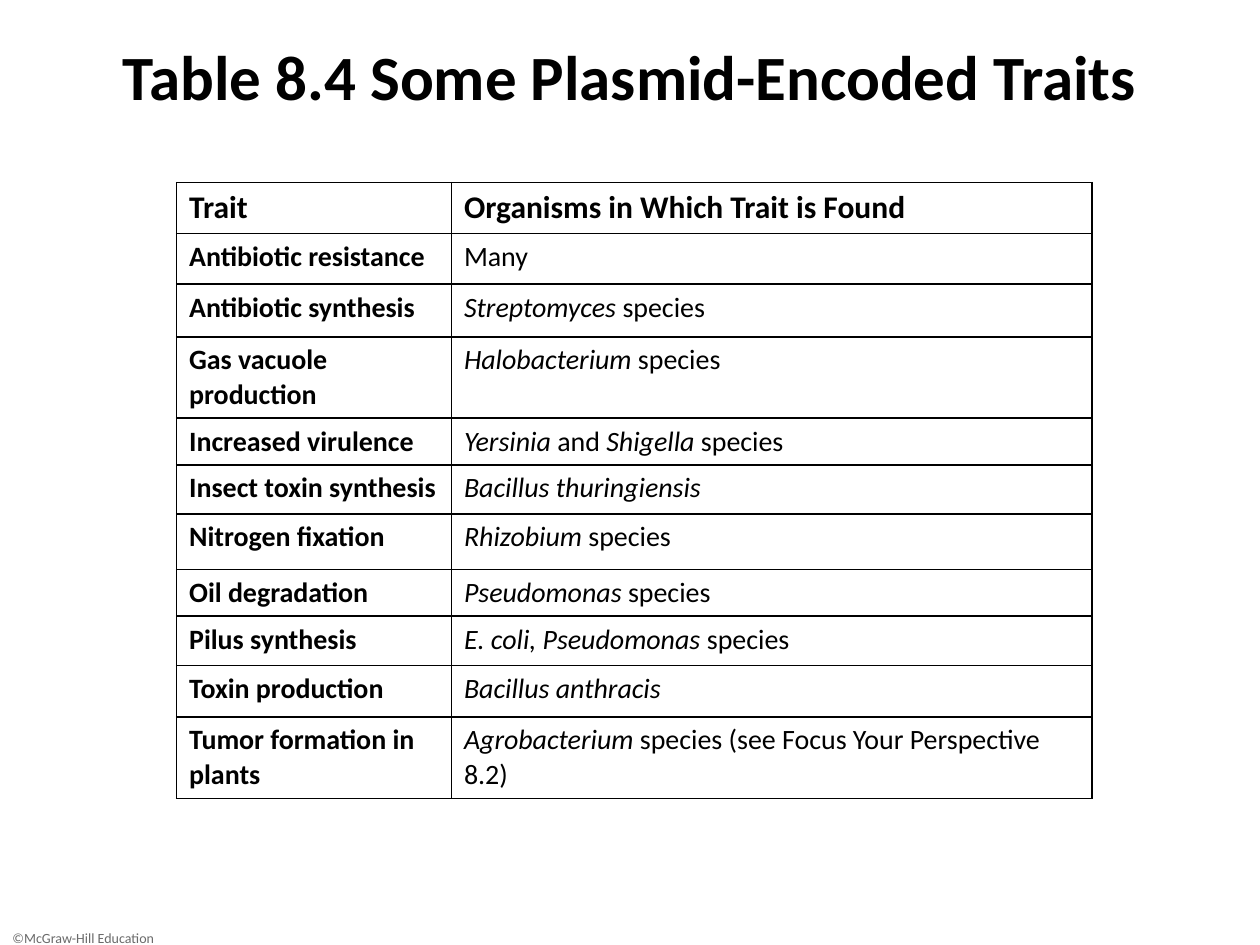
from lxml.etree import SubElement
from pptx import Presentation
from pptx.dml.color import RGBColor
from pptx.enum.text import MSO_ANCHOR, PP_ALIGN
from pptx.oxml import parse_xml
from pptx.oxml.ns import nsdecls, qn
from pptx.util import Cm, Pt


def set_font(font, size, color="000000", bold=False):
    font.name = "Calibri"
    font.size = Pt(size)
    font.bold = bold
    font.color.rgb = RGBColor.from_string(color)


def add_text(page, text, left, top, width, height):
    box = page.shapes.add_textbox(Cm(left), Cm(top), Cm(width), Cm(height))
    box.text_frame.word_wrap = True
    box.text_frame.vertical_anchor = MSO_ANCHOR.TOP
    para = box.text_frame.paragraphs[0]
    para.text = text
    return para


deck = Presentation()
deck.slide_width, deck.slide_height = Cm(25.4), Cm(19.05)
page = deck.slides.add_slide(deck.slide_layouts[6])

copyright_line = add_text(page, "©McGraw-Hill Education", 0, 18.62, 3.81, 0.43)
set_font(copyright_line.font, 8, "6A6A6A")

title = add_text(page, "Table 8.4 Some Plasmid-Encoded Traits", 0, 0.64, 25.4, 1.7)
title.alignment = PP_ALIGN.CENTER
set_font(title.font, 36, bold=True)

# Asterisks enclose species names set in italics; each row ends with its height.
rows = [
    ("Trait", "Organisms in Which Trait is Found", 1.03),
    ("Antibiotic resistance", "Many", 1.02),
    ("Antibiotic synthesis", "*Streptomyces* species", 1.06),
    ("Gas vacuole production", "*Halobacterium* species", 1.64),
    ("Increased virulence", "*Yersinia* and *Shigella* species", 0.94),
    ("Insect toxin synthesis", "*Bacillus thuringiensis*", 0.99),
    ("Nitrogen fixation", "*Rhizobium* species", 1.12),
    ("Oil degradation", "*Pseudomonas* species", 0.94),
    ("Pilus synthesis", "*E. coli, Pseudomonas *species", 1),
    ("Toxin production", "*Bacillus anthracis*", 1.03),
    ("Tumor formation in plants", "*Agrobacterium* species (see Focus Your Perspective 8.2)", 1.65),
]
total_height = sum(height for *_, height in rows)
table = page.shapes.add_table(
    len(rows), 2, Cm(3.56), Cm(3.68), Cm(18.45), Cm(total_height)
).table
table.columns[0].width = Cm(5.54)
table.columns[1].width = Cm(12.91)

for row_index, (trait, organisms, height) in enumerate(rows):
    table.rows[row_index].height = Cm(height)
    is_header = row_index == 0
    for column_index, text in enumerate((trait, organisms)):
        cell = table.cell(row_index, column_index)
        para = cell.text_frame.paragraphs[0]
        for part_index, part in enumerate(text.split("*")):
            if part:
                span = para.add_run()
                span.text = part
                if part_index % 2:
                    span.font.italic = True
        set_font(para.font, 18 if is_header else 16, bold=is_header or column_index == 0)
        properties = cell._tc.get_or_add_tcPr()
        for side in ("lnL", "lnR", "lnT", "lnB"):
            border = SubElement(properties, qn(f"a:{side}"), w=str(Pt(1)))
            border.append(parse_xml(
                f'<a:solidFill {nsdecls("a")}><a:srgbClr val="000000"/></a:solidFill>'
            ))
        cell.fill.background()

deck.save("out.pptx")
